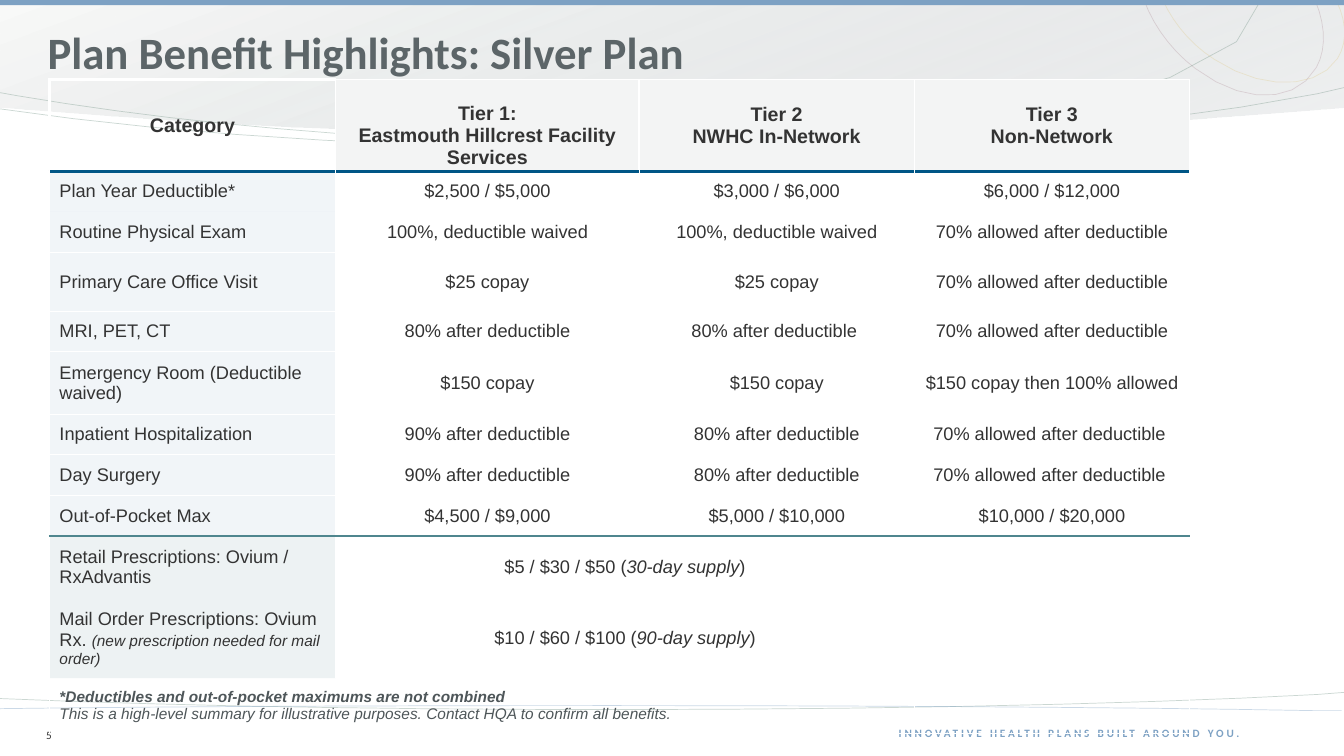
from typing import NamedTuple

from lxml.etree import SubElement
from pptx import Presentation
from pptx.dml.color import RGBColor
from pptx.enum.shapes import MSO_SHAPE
from pptx.enum.text import MSO_ANCHOR, PP_ALIGN
from pptx.oxml.ns import qn
from pptx.util import Pt

WHITE, INK, BLUE, NAVY, TEAL = "FFFFFF", "333333", "7DA1C3", "005686", "4F868E"
SAGE, GOLD, WINE, PALE = "7F9C90", "D29F12", "6F263C", "F3F4F4"
STEPS = 7


class Curve(NamedTuple):
    color: str
    alpha: int
    start: tuple
    legs: list  # 2 numbers: straight to a point; 6 numbers: Bezier


class Label(NamedTuple):
    text: str
    box: tuple
    size: float
    color: str
    bold: bool = False
    align: PP_ALIGN = PP_ALIGN.LEFT
    anchor: MSO_ANCHOR = MSO_ANCHOR.MIDDLE
    space: int = 0
    lead: float = 1.0


class Row(NamedTuple):
    height: float
    texts: list  # text between underscores is italic
    tint: str = BLUE
    base: str = WHITE  # colour of the bottom rule, empty for none
    merge: tuple = ()


BAND = Curve("", 100, (0, 0), [
    (960, 0), (960, 76.3), (942.5, 77.8),
    (800.6, 90, 643.7, 96.5, 480.2, 96.5),
    (316.1, 96.5, 159.8, 90, 17.3, 77.8), (0, 76.3)])

CURVES = [
    Curve(GOLD, 15, (954.7, 0.7), [
        (962, 15.8, 962.6, 30.2, 955.4, 41.8),
        (941, 64.1, 901.4, 64.8, 867.6, 42.5),
        (849.6, 31, 838.1, 15.8, 830.9, 0.7)]),
    Curve(SAGE, 40, (900.7, 0), [
        (897.8, 74.2, 619.2, 118.1, 279.4, 97.9),
        (183.6, 92.2, 92.9, 82.1, 12.2, 68.4), (0, 66.2)]),
    Curve(SAGE, 40, (960, 62.6), [
        (941, 67), (821.5, 90.7, 640.1, 105.8, 437.8, 105.8),
        (269.3, 105.8, 115.9, 95, 0, 77.8)]),
    Curve(WINE, 15, (939.6, 0.7), [
        (946.8, 18, 947.5, 35.3, 940.3, 48.2),
        (925.9, 74.2, 887.8, 74.9, 853.9, 49),
        (836.6, 36, 823.7, 18, 817.2, 0)]),
    Curve(SAGE, 40, (960, 494.6), [
        (941, 496.1), (821.5, 502.6, 640.1, 506.9, 437.8, 506.9),
        (269.3, 506.9, 115.9, 504, 0, 499)]),
    Curve(BLUE, 40, (958.3, 507.6), [
        (938.9, 507.6), (819.4, 505.4, 638.6, 504, 436.3, 504),
        (267.8, 504, 113.8, 504.7, 0, 506.2)]),
]

LABELS = [
    Label("INNOVATIVE HEALTH PLANS BUILT AROUND YOU.", (311, 515.5, 582, 17.3),
          8, BLUE, True, PP_ALIGN.RIGHT, MSO_ANCHOR.TOP, 2),
    Label("Plan Benefit Highlights: Silver Plan", (26.9, 16.6, 860.4, 45.4),
          32, "5C6568", True, lead=0.9),
    Label("5", (25.9, 516.2, 54, 18), 8, INK),
]

COLS = [204.5, 216.7, 196.6, 196.6]
AFTER = "70% allowed after deductible"
ROWS = [
    Row(65.5, ["Category", "Tier 1:\nEastmouth Hillcrest Facility Services",
               "Tier 2\nNWHC In-Network", "Tier 3\nNon-Network"], PALE, NAVY),
    Row(29, ["Plan Year Deductible*", "$2,500 / $5,000", "$3,000 / $6,000",
             "$6,000 / $12,000"], base=""),
    Row(29, ["Routine Physical Exam", "100%, deductible waived",
             "100%, deductible waived", AFTER]),
    Row(42, ["Primary Care Office Visit", "$25 copay", "$25 copay", AFTER]),
    Row(29, ["MRI, PET, CT", "80% after deductible", "80% after deductible ", AFTER]),
    Row(44.6, ["Emergency Room (Deductible waived)", "$150 copay", "$150 copay",
               "$150 copay then 100% allowed"]),
    Row(29, ["Inpatient Hospitalization", "90% after deductible",
             "80% after deductible", AFTER + " "]),
    Row(29, ["Day Surgery", "90% after deductible", "80% after deductible", AFTER + " "]),
    Row(29, ["Out-of-Pocket Max", "$4,500 / $9,000", "$5,000 / $10,000",
             "$10,000 / $20,000"], base=TEAL),
    Row(44.6, ["Retail Prescriptions: Ovium / RxAdvantis",
               "$5 / $30 / $50 (_30-day supply_)"], TEAL, "", (1, 2)),
    Row(56.9, ["Mail Order Prescriptions: Ovium Rx. _(new prescription needed for mail order)_",
               "$10 / $60 / $100 (_90-day supply_)"], TEAL, "", (1, 2)),
    Row(39.6, ["_*Deductibles and out-of-pocket maximums are not combined_\n"
               "_This is a high-level summary for illustrative purposes. "
               "Contact HQA to confirm all benefits._"], "", merge=(0, 2)),
]


def shade(fill, color: str) -> None:
    fill.solid()
    fill.fore_color.rgb = RGBColor.from_string(color)


def fade(part, alpha: int) -> None:
    """Make the last colour inside an element partly transparent."""
    last = list(part.iter(qn("a:srgbClr")))[-1]
    SubElement(last, qn("a:alpha")).set("val", str(alpha * 1000))


def style(font, size: float, color: str, name: str, bold: bool) -> None:
    font.size, font.name, font.bold = Pt(size), name, bold
    font.color.rgb = RGBColor.from_string(color)


def trace(shapes, curve: Curve, close: bool = False):
    spots, last = [], curve.start
    for leg in curve.legs:
        if len(leg) == 6:
            ends = (last, leg[:2], leg[2:4], leg[4:])
            for step in range(1, STEPS + 1):
                t = step / STEPS
                mix = ((1 - t) ** 3, 3 * t * (1 - t) ** 2, 3 * t * t * (1 - t), t ** 3)
                spots.append(tuple(sum(m * p[i] for m, p in zip(mix, ends)) for i in (0, 1)))
        else:
            spots.append(leg)
        last = leg[-2:]
    pen = shapes.build_freeform(Pt(curve.start[0]), Pt(curve.start[1]))
    pen.add_line_segments([(Pt(x), Pt(y)) for x, y in spots], close=close)
    form = pen.convert_to_shape()
    form.shadow.inherit = False
    return form


def stroke(shapes, curve: Curve) -> None:
    form = trace(shapes, curve)
    form.fill.background()
    form.line.width = Pt(0.5)
    shade(form.line.fill, curve.color)
    fade(form.line._ln, curve.alpha)


def write(shapes, label: Label) -> None:
    frame = shapes.add_textbox(*map(Pt, label.box)).text_frame
    frame.word_wrap, frame.vertical_anchor = True, label.anchor
    frame.text = label.text
    line = frame.paragraphs[0]
    line.alignment, line.line_spacing = label.align, label.lead
    style(line.runs[0].font, label.size, label.color, "Calibri", label.bold)
    if label.space:
        line.runs[0]._r.get_or_add_rPr().set("spc", str(label.space * 100))


def rule(cell, edge: str, color: str, width: float) -> None:
    line = SubElement(cell._tc.get_or_add_tcPr(), qn(f"a:ln{edge}"), w=str(Pt(width)))
    if color:
        SubElement(SubElement(line, qn("a:solidFill")), qn("a:srgbClr"), val=color)
    else:
        SubElement(line, qn("a:noFill"))


def fill_cell(cell, row: Row, r: int, c: int) -> None:
    head, note = r == 0, r == len(ROWS) - 1
    # Borders
    top = ROWS[r - 1].base if r else WHITE
    for edge in "LRTB":
        color = {"T": top, "B": row.base}.get(edge, WHITE)
        thick = color in (NAVY, TEAL) or (head and c == 0 and edge in "LT")
        rule(cell, edge, color, 2.25 if thick else 1 if head else 0.75)
    # Fill
    if row.tint and (c > 0 if head else c == 0):
        shade(cell.fill, row.tint)
        if not head:
            fade(cell._tc.tcPr, 10)
    else:
        cell.fill.background()
    # Text
    cell.margin_left = cell.margin_right = Pt(0 if head else 7.2)
    cell.margin_top = cell.margin_bottom = Pt(0 if head else 6)
    if head and c == 1:
        cell.margin_top = Pt(15)
    cell.vertical_anchor = MSO_ANCHOR.MIDDLE
    if c >= len(row.texts):
        return
    frame = cell.text_frame
    for n, text in enumerate(row.texts[c].split("\n")):
        line = frame.add_paragraph() if n else frame.paragraphs[0]
        line.alignment = PP_ALIGN.CENTER if head or c else PP_ALIGN.LEFT
        for i, part in enumerate(text.split("_")):
            if part:
                run = line.add_run()
                run.text = part
                slant = i % 2 == 1
                size = 14 if head else 11 if slant and c == 0 else 13
                style(run.font, size, "4E5659" if note else INK, "Arial",
                      head or (note and n == 0))
                run.font.italic = slant


def main() -> None:
    deck = Presentation()
    deck.slide_width, deck.slide_height = Pt(960), Pt(540)
    shapes = deck.slides.add_slide(deck.slide_layouts[6]).shapes

    # Backdrop
    band = trace(shapes, BAND, True)
    band.line.fill.background()
    band.fill.gradient()
    band.fill.gradient_angle = 290
    for stop, color in zip(band.fill.gradient_stops, ("F9FAF9", "C1C6C8")):
        stop.color.rgb = RGBColor.from_string(color)
    fade(band._element.spPr, 24)
    for curve in CURVES:
        stroke(shapes, curve)
    bar = shapes.add_shape(MSO_SHAPE.RECTANGLE, 0, 0, Pt(960), Pt(3.6))
    bar.shadow.inherit = False
    shade(bar.fill, BLUE)
    bar.line.fill.background()

    # Title, tagline and page number
    for label in LABELS:
        write(shapes, label)

    # Benefit table
    high = sum(row.height for row in ROWS)
    grid = shapes.add_table(len(ROWS), len(COLS), Pt(35.3), Pt(56.9),
                            Pt(sum(COLS)), Pt(high)).table
    grid.first_row = grid.horz_banding = False
    for col, width in zip(grid.columns, COLS):
        col.width = Pt(width)
    for r, row in enumerate(ROWS):
        grid.rows[r].height = Pt(row.height)
        for c in range(len(COLS)):
            fill_cell(grid.cell(r, c), row, r, c)
        if row.merge:
            first, last = row.merge
            grid.cell(r, first).merge(grid.cell(r, last))

    deck.save("out.pptx")


if __name__ == "__main__":
    main()
